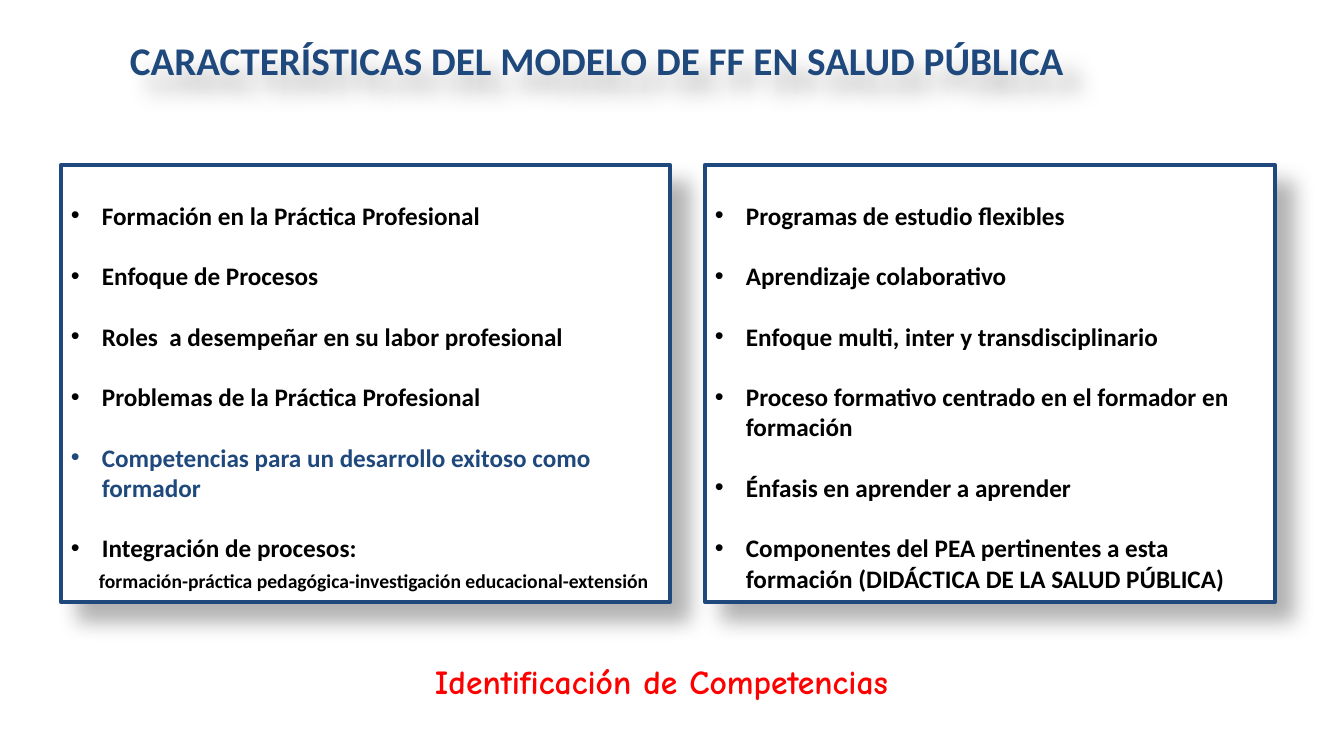
from dataclasses import dataclass

from lxml import etree
from pptx import Presentation
from pptx import util as u
from pptx.dml.color import RGBColor
from pptx.enum import shapes, text
from pptx.oxml.ns import qn


@dataclass(frozen=True)
class Theme:
    blue: str = "1F497D"
    black: str = "000000"
    white: str = "FFFFFF"
    red: str = "FF0000"
    body_font: str = "Calibri"
    closing_font: str = "Comic Neue"
    title_size: int = 28
    closing_size: int = 24
    body_size: int = 18
    detail_size: int = 14
    item_gap: float = 21.6
    detail_gap: int = 4
    border: int = 3


def px(count):
    return u.Emu(round(count * 914400 / 100.8))


class SlideBuilder:
    def __init__(self, slide, theme):
        self.slide = slide
        self.theme = theme

    def add_run(self, paragraph, words, size, color, font):
        run = paragraph.add_run()
        run.text = words
        run.font.size = u.Pt(size)
        run.font.bold = True
        run.font.name = font
        run.font.color.rgb = RGBColor.from_string(color)

    def add_shadow(self, shape):
        shape.shadow.inherit = False
        effects = shape._element.spPr.find(qn("a:effectLst"))
        shadow = etree.SubElement(
            effects, qn("a:outerShdw"), blurRad=str(u.Pt(15)), dist=str(u.Pt(18)),
            dir=str(45 * 60000), algn="tl", rotWithShape="0")
        color = etree.SubElement(shadow, qn("a:srgbClr"), val=self.theme.black)
        etree.SubElement(color, qn("a:alpha"), val="30000")

    def indent(self, paragraph, left, hanging=0):
        properties = paragraph._p.get_or_add_pPr()
        properties.set("marL", str(px(left)))
        properties.set("indent", str(-px(hanging)))
        return properties

    def heading(self, box, words, size, color, font):
        area = self.slide.shapes.add_textbox(*map(px, box))
        area.text_frame.word_wrap = True
        area.text_frame.auto_size = text.MSO_AUTO_SIZE.SHAPE_TO_FIT_TEXT
        self.add_run(area.text_frame.paragraphs[0], words, size, color, font)
        return area

    def panel(self, box, items, highlight=None, detail=None):
        theme = self.theme
        panel = self.slide.shapes.add_shape(
            shapes.MSO_SHAPE.RECTANGLE, *map(px, box))
        panel.fill.solid()
        panel.fill.fore_color.rgb = RGBColor.from_string(theme.white)
        panel.line.color.rgb = RGBColor.from_string(theme.blue)
        panel.line.width = u.Pt(theme.border)
        self.add_shadow(panel)

        frame = panel.text_frame
        frame.word_wrap = True
        frame.auto_size = text.MSO_AUTO_SIZE.SHAPE_TO_FIT_TEXT
        frame.vertical_anchor = text.MSO_ANCHOR.TOP
        frame.margin_top = px(35)
        for index, item in enumerate(items):
            paragraph = frame.add_paragraph() if index else frame.paragraphs[0]
            paragraph.alignment = text.PP_ALIGN.LEFT
            paragraph.space_before = u.Pt(theme.item_gap if index else 0)
            properties = self.indent(paragraph, 31, 31)
            etree.SubElement(properties, qn("a:buFont"), typeface="Arial")
            etree.SubElement(properties, qn("a:buChar"), char="•")
            color = theme.blue if item == highlight else theme.black
            self.add_run(paragraph, item, theme.body_size, color, theme.body_font)
        if detail:
            paragraph = frame.add_paragraph()
            paragraph.alignment = text.PP_ALIGN.LEFT
            paragraph.space_before = u.Pt(theme.detail_gap)
            self.indent(paragraph, 28)
            self.add_run(paragraph, detail, theme.detail_size, theme.black,
                         theme.body_font)


def main():
    theme = Theme()
    deck = Presentation()
    deck.slide_width, deck.slide_height = px(1344), px(756)
    builder = SlideBuilder(deck.slides.add_slide(deck.slide_layouts[6]), theme)

    # Left panel: professional practice
    competencies = "Competencias para un desarrollo exitoso como formador"
    builder.panel(
        (61, 165, 609, 437),
        ["Formación en la Práctica Profesional",
         "Enfoque de Procesos",
         "Roles  a desempeñar en su labor profesional",
         "Problemas de la Práctica Profesional",
         competencies,
         "Integración de procesos:"],
        highlight=competencies,
        detail="formación-práctica pedagógica-investigación educacional-extensión")

    # Title
    title = builder.heading(
        (120, 31, 1014, 57), "CARACTERÍSTICAS DEL MODELO DE FF EN SALUD PÚBLICA",
        theme.title_size, theme.blue, theme.body_font)
    builder.add_shadow(title)

    # Right panel: training approach
    builder.panel(
        (705, 165, 570, 437),
        ["Programas de estudio flexibles",
         "Aprendizaje colaborativo",
         "Enfoque multi, inter y transdisciplinario",
         "Proceso formativo centrado en el formador en formación",
         "Énfasis en aprender a aprender",
         "Componentes del PEA pertinentes a esta formación "
         "(DIDÁCTICA DE LA SALUD PÚBLICA)"])

    # Closing line
    builder.heading((425, 656, 530, 50), "Identificación de Competencias",
                    theme.closing_size, theme.red, theme.closing_font)

    deck.save("out.pptx")


if __name__ == "__main__":
    main()
